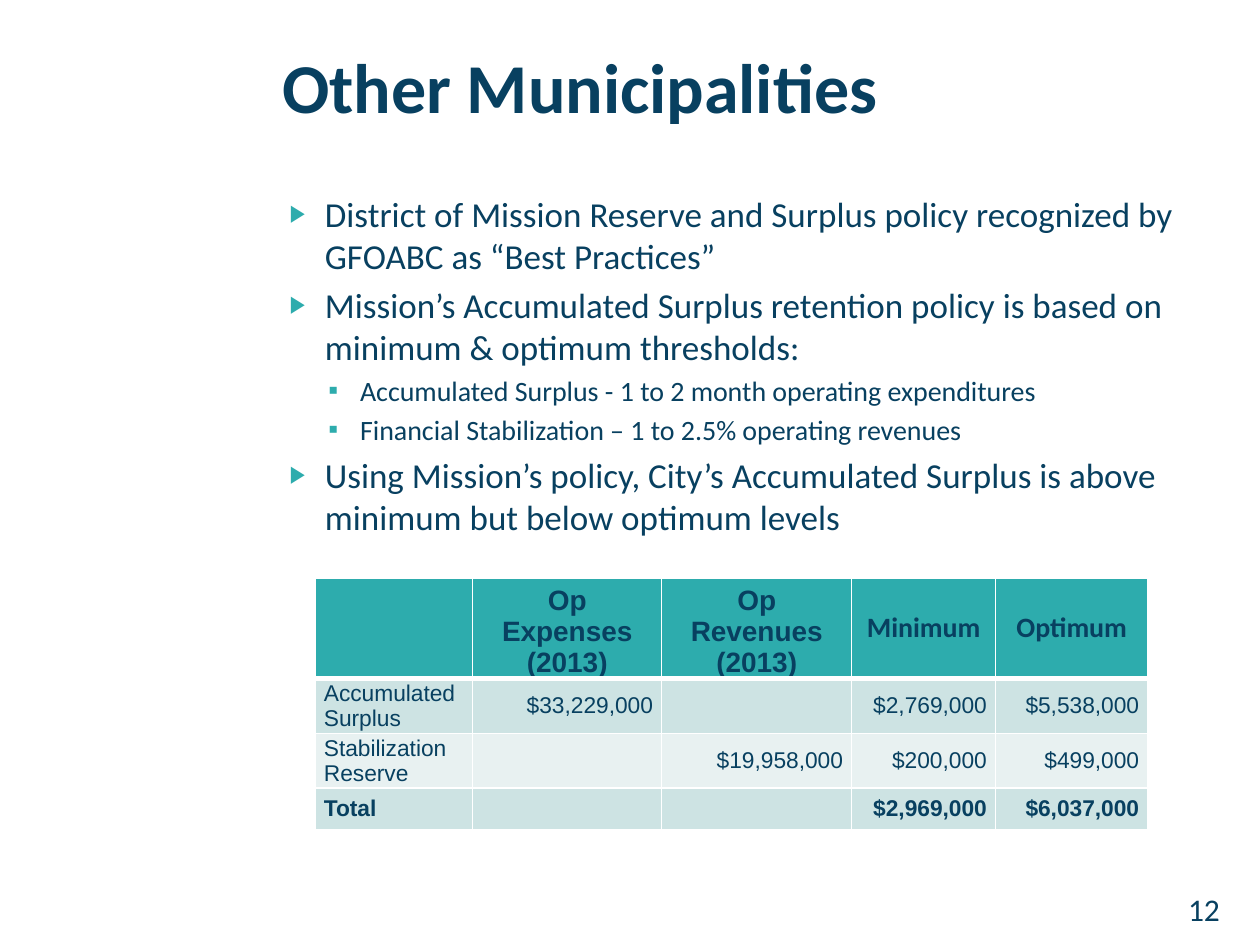
from lxml.etree import SubElement
from pptx import Presentation
from pptx.dml.color import RGBColor
from pptx.enum.text import MSO_ANCHOR as Anchor, PP_ALIGN as Align
from pptx.oxml.ns import qn
from pptx.util import Cm, Pt

NAVY = RGBColor(0x08, 0x40, 0x60)
TEAL = RGBColor(0x2D, 0xAC, 0xAD)
PALE = RGBColor(0xCD, 0xE3, 0xE3)
PALEST = RGBColor(0xE8, 0xF1, 0xF1)
WHITE = RGBColor(0xFF, 0xFF, 0xFF)

# Per level: symbol, symbol size %, text size, space before, margin, hanging indent
BULLET_LEVELS = [
    ("▶", 68, 20, 4, Cm(1.02), Cm(-0.71)),
    ("▪", 100, 16, 3.2, Cm(1.73), Cm(-0.64)),
]
BULLETS = [
    (0, "District of Mission Reserve and Surplus policy recognized by GFOABC as “Best Practices”"),
    (0, "Mission’s Accumulated Surplus retention policy is based on minimum & optimum thresholds:"),
    (1, "Accumulated Surplus - 1 to 2 month operating expenditures"),
    (1, "Financial Stabilization – 1 to 2.5% operating revenues"),
    (0, "Using Mission’s policy, City’s Accumulated Surplus is above minimum but below optimum levels"),
]
TABLE_ROWS = [
    ["", "Op Expenses (2013)", "Op Revenues (2013)", "Minimum", "Optimum"],
    ["Accumulated Surplus", "$33,229,000", "", "$2,769,000", "$5,538,000"],
    ["Stabilization Reserve", "", "$19,958,000", "$200,000", "$499,000"],
    ["Total", "", "", "$2,969,000", "$6,037,000"],
]
COLUMN_WIDTHS = [3.18, 3.81, 3.83, 2.9, 3.07]
ROW_HEIGHTS = [1.85, 1.02, 1.02, 0.84]


def style(para, size, bold=False, name="Calibri"):
    font = para.font
    font.name, font.size, font.bold = name, Pt(size), bold
    font.color.rgb = NAVY


def add_text_frame(page, left, top, width, height):
    box = page.shapes.add_textbox(Cm(left), Cm(top), Cm(width), Cm(height))
    box.text_frame.word_wrap = True
    return box.text_frame


def add_line(page, place, text, size, bold=False):
    para = add_text_frame(page, *place).paragraphs[0]
    para.text = text
    style(para, size, bold)


def format_bullet(para, level, first):
    symbol, percent, size, gap, margin, indent = BULLET_LEVELS[level]
    para.level = level
    para.space_before = Pt(0 if first else gap)
    props = para._p.get_or_add_pPr()
    props.set("marL", str(margin))
    props.set("indent", str(indent))
    color = SubElement(props, qn("a:buClr"))
    SubElement(color, qn("a:srgbClr"), val=str(TEAL))
    SubElement(props, qn("a:buSzPct"), val=str(percent * 1000))
    SubElement(props, qn("a:buFont"), typeface="Arial")
    SubElement(props, qn("a:buChar"), char=symbol)
    style(para, size)


def add_bullets(page, place, items):
    frame = add_text_frame(page, *place)
    for index, (level, text) in enumerate(items):
        para = frame.add_paragraph() if index else frame.paragraphs[0]
        para.text = text
        format_bullet(para, level, first=index == 0)


def set_borders(cell, row):
    """White grid, with a heavier rule under the header row."""
    props = cell._tc.get_or_add_tcPr()
    widths = {"L": 1, "R": 1, "T": 3 if row == 1 else 1, "B": 3 if row == 0 else 1}
    for side, width in widths.items():
        line = SubElement(props, qn(f"a:ln{side}"), w=str(Pt(width)))
        fill = SubElement(line, qn("a:solidFill"))
        SubElement(fill, qn("a:srgbClr"), val=str(WHITE))


def format_cell(cell, text, row, column):
    header, total = row == 0, row == len(TABLE_ROWS) - 1
    set_borders(cell, row)
    cell.fill.solid()
    cell.fill.fore_color.rgb = TEAL if header else PALE if row % 2 else PALEST
    cell.margin_left = cell.margin_right = Cm(0.18)
    cell.margin_top = cell.margin_bottom = 0
    cell.vertical_anchor = Anchor.BOTTOM if header and column < 3 else Anchor.MIDDLE
    para = cell.text_frame.paragraphs[0]
    if text:
        para.text = text
    para.alignment = Align.CENTER if header else Align.RIGHT if column else Align.LEFT
    style(para, 16 if header else 13, header or total,
          "Calibri" if header and column >= 3 else "Arial")


def add_surplus_table(page, left, top):
    table = page.shapes.add_table(
        len(ROW_HEIGHTS), len(COLUMN_WIDTHS), Cm(left), Cm(top),
        Cm(sum(COLUMN_WIDTHS)), Cm(sum(ROW_HEIGHTS))).table
    for column, width in zip(table.columns, COLUMN_WIDTHS):
        column.width = Cm(width)
    for row, height in zip(table.rows, ROW_HEIGHTS):
        row.height = Cm(height)
    for row, texts in enumerate(TABLE_ROWS):
        for column, text in enumerate(texts):
            format_cell(table.cell(row, column), text, row, column)


def main():
    deck = Presentation()
    deck.slide_width, deck.slide_height = Cm(25.4), Cm(19.05)
    page = deck.slides.add_slide(deck.slide_layouts[6])
    add_bullets(page, (5.28, 3.76, 18.77, 7.67), BULLETS)
    add_line(page, (5.44, 0.76, 18.77, 3.18), "Other Municipalities", 40, bold=True)
    add_line(page, (23.7, 17.81, 1.32, 1.02), "12", 18)
    add_surplus_table(page, 6.35, 11.65)
    deck.save("out.pptx")


if __name__ == "__main__":
    main()
